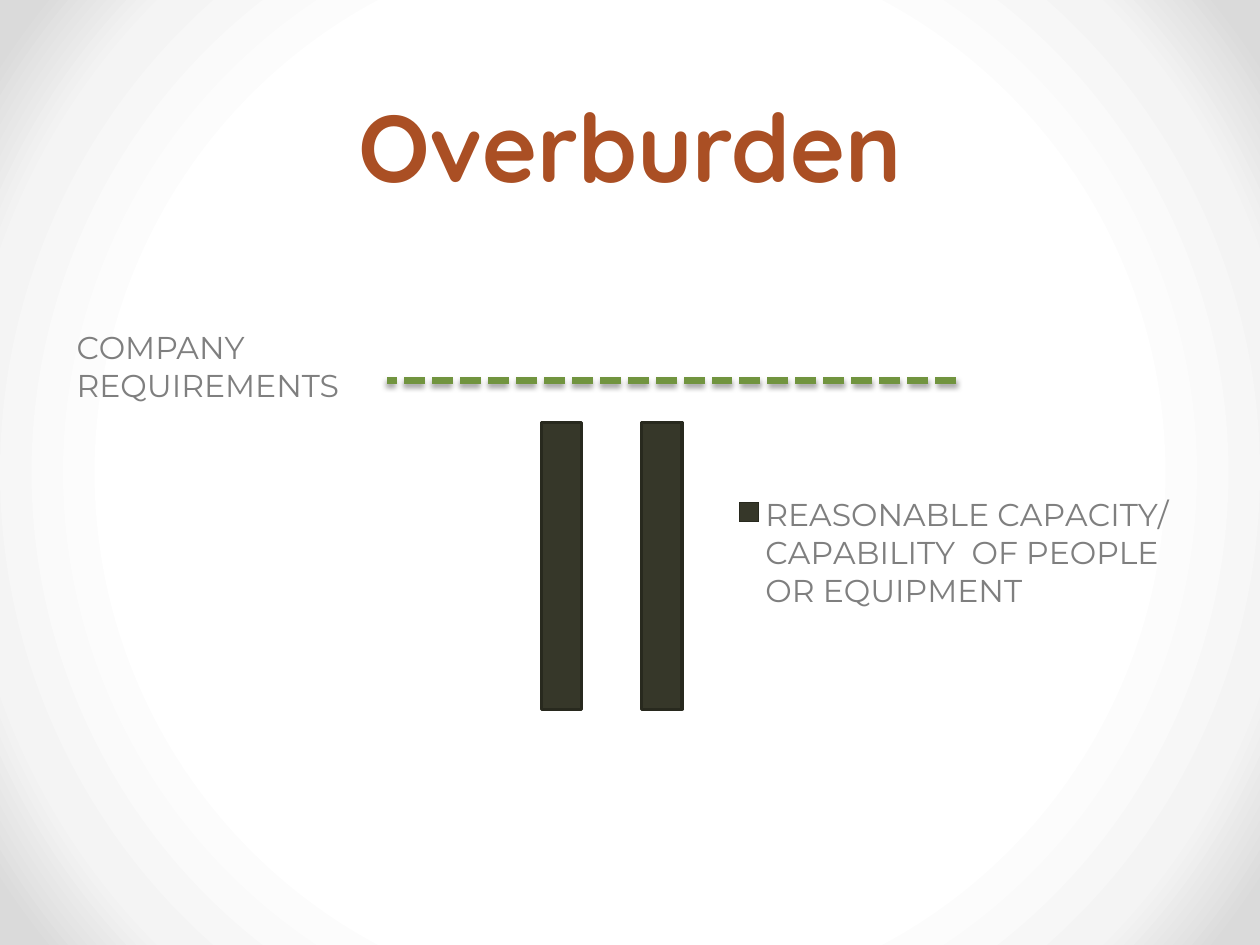
from lxml.etree import fromstring
from pptx import Presentation
from pptx.chart.data import CategoryChartData as Data
from pptx.dml.color import RGBColor as RGB
from pptx.enum.chart import XL_CHART_TYPE as Kind, XL_LEGEND_POSITION as Side
from pptx.enum.dml import MSO_LINE as Dash
from pptx.enum.shapes import MSO_CONNECTOR as Link
from pptx.enum.text import MSO_ANCHOR as Anchor, PP_ALIGN as Align
from pptx.oxml.ns import qn, nsdecls
from pptx.util import Inches, Pt

WIDE, HIGH = Inches(10), Inches(7.5)
RUST = RGB(0xAA, 0x4F, 0x24)
GRAY = RGB(0x7F, 0x7F, 0x7F)
GREEN = RGB(0x71, 0x94, 0x3F)
OLIVE = RGB(0x36, 0x37, 0x29)
EDGE = RGB(0x28, 0x29, 0x1E)
WHITE = RGB(0xFF, 0xFF, 0xFF)
PALE = RGB(0xF4, 0xF4, 0xF4)
SILVER = RGB(0xDA, 0xDA, 0xDA)
BODY = "Montserrat"


def box(x, y, w, h):
    return [round(part) for part in (x * WIDE, y * HIGH, w * WIDE, h * HIGH)]


def add_glow(slide, stops):
    slide.background.fill.gradient()
    grad = next(slide.element.iter(qn("a:gradFill")))
    marks = "".join(
        f'<a:gs pos="{pos * 1000}"><a:srgbClr val="{tone}"/></a:gs>'
        for pos, tone in stops)
    grad.getparent().replace(grad, fromstring(
        f'<a:gradFill {nsdecls("a")} rotWithShape="1"><a:gsLst>{marks}</a:gsLst>'
        '<a:path path="circle"><a:fillToRect l="50000" t="50000" r="50000" '
        'b="50000"/></a:path></a:gradFill>'))


def add_text(slide, text, place, size=18, face=BODY, tone=GRAY, bold=False,
             align=Align.LEFT, anchor=Anchor.TOP, pitch=None):
    frame = slide.shapes.add_textbox(*box(*place)).text_frame
    frame.word_wrap = True
    frame.vertical_anchor = anchor
    para = frame.paragraphs[0]
    para.alignment = align
    para.line_spacing = pitch
    run = para.add_run()
    run.text = text
    style(run.font, size, face, tone)
    run.font.bold = bold


def style(font, size, face, tone):
    font.size = Pt(size)
    font.name = face
    font.color.rgb = tone


def set_place(part, index, place, inner=False):
    for old in part.findall(qn("c:layout")):
        part.remove(old)
    target = '<c:layoutTarget val="inner"/>' if inner else ""
    modes = "".join(f'<c:{axis}Mode val="edge"/>' for axis in "xy")
    sizes = "".join(f'<c:{key} val="{val}"/>' for key, val in zip("xywh", place))
    part.insert(index, fromstring(
        f'<c:layout {nsdecls("c")}><c:manualLayout>{target}{modes}{sizes}'
        '</c:manualLayout></c:layout>'))


def add_bars(slide, name, vals, place):
    data = Data()
    data.categories = ["1"] + [""] * (len(vals) - 1)
    data.add_series(name, vals)
    chart = slide.shapes.add_chart(
        Kind.COLUMN_CLUSTERED, *box(*place), data).chart
    style(chart.font, 18, "Arial", GRAY)
    chart.has_title = False
    for axis in (chart.category_axis, chart.value_axis):
        axis.has_major_gridlines = False
        axis.visible = False
    chart.value_axis.minimum_scale = 0
    chart.value_axis.maximum_scale = 120
    plot = chart.plots[0]
    plot.gap_width = 150
    plot.vary_by_categories = False
    form = plot.series[0].format
    form.fill.solid()
    form.fill.fore_color.rgb = OLIVE
    form.line.color.rgb = EDGE
    form.line.width = Pt(2)
    chart.has_legend = True
    key = chart.legend
    key.position = Side.RIGHT
    key.include_in_layout = False
    style(key.font, 18, BODY, GRAY)
    area = next(chart.element.iter(qn("c:plotArea")))
    set_place(area, 0, (0.03, 0.09, 0.6, 0.77), inner=True)
    set_place(next(chart.element.iter(qn("c:legend"))), 1, (0.28, 0.37, 0.56, 0.28))


def add_dash(slide, start, end, y):
    line = slide.shapes.add_connector(
        Link.STRAIGHT, round(start * WIDE), round(y * HIGH),
        round(end * WIDE), round(y * HIGH))
    line.line.color.rgb = GREEN
    line.line.width = Pt(4)
    line.line.dash_style = Dash.SQUARE_DOT
    props = next(line.element.iter(qn("p:spPr")))
    props.append(fromstring(
        f'<a:effectLst {nsdecls("a")}><a:outerShdw blurRad="{Pt(3.1)}" '
        f'dist="{Pt(1.8)}" dir="5400000" rotWithShape="0">'
        '<a:srgbClr val="000000"><a:alpha val="35000"/></a:srgbClr>'
        '</a:outerShdw></a:effectLst>'))


def main():
    deck = Presentation()
    deck.slide_width, deck.slide_height = WIDE, HIGH
    slide = deck.slides.add_slide(deck.slide_layouts[6])
    add_glow(slide, [(64, WHITE), (84, PALE), (96, SILVER)])
    add_text(slide, "Overburden", (0.05, 0.08, 0.9, 0.14), size=54,
             face="Quicksand", tone=RUST, bold=True, align=Align.CENTER,
             anchor=Anchor.BOTTOM, pitch=Pt(58))
    add_bars(slide, "REASONABLE CAPACITY/ CAPABILITY  OF PEOPLE OR EQUIPMENT",
             [100, 100, None, None, None], (0.386, 0.344, 0.663, 0.473))
    add_text(slide, "COMPANY REQUIREMENTS", (0.051, 0.341, 0.315, 0.095))
    add_dash(slide, 0.759, 0.307, 0.403)
    deck.save("out.pptx")


if __name__ == "__main__":
    main()
